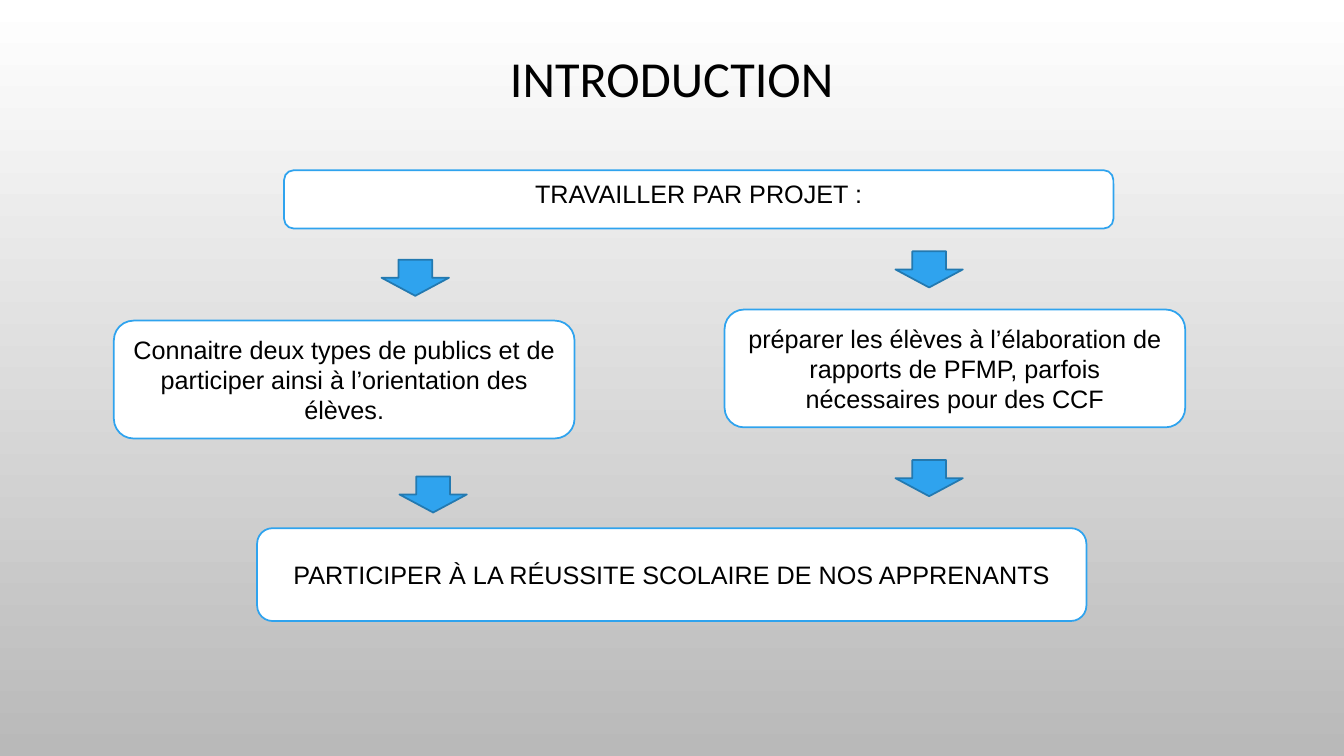
from typing import NamedTuple

from pptx import Presentation
from pptx.dml.color import RGBColor
from pptx.enum.shapes import MSO_SHAPE
from pptx.enum.text import MSO_ANCHOR, PP_ALIGN
from pptx.util import Cm, Pt

ROUND = MSO_SHAPE.ROUNDED_RECTANGLE
ARROW = MSO_SHAPE.RIGHT_ARROW
MIDDLE = MSO_ANCHOR.MIDDLE
CENTER = PP_ALIGN.CENTER

BLACK, WHITE, GREY = "000000", "FFFFFF", "B9B9B9"
BLUE, NAVY = "2FA3EE", "2379B0"
WIDE, HALF = 20.9, 11.61  # box widths in cm
LONG, THICK = 0.91, 1.7  # arrow size in cm


class Box(NamedTuple):
    left: float
    top: float
    width: float
    height: float
    text: str
    bottom: float = 0.13  # bottom inset in cm


class Arrow(NamedTuple):
    left: float
    top: float


BOXES = [
    Box(7.16, 4.29, WIDE, 1.47, "TRAVAILLER PAR PROJET :", 0.41),
    Box(2.87, 8.08, HALF, 2.97,
        "Connaitre deux types de publics et de participer ainsi à "
        "l’orientation des élèves."),
    Box(18.26, 7.8, HALF, 2.97,
        "préparer les élèves à l’élaboration de rapports de PFMP, "
        "parfois nécessaires pour des CCF"),
    Box(6.48, 13.31, WIDE, 2.34,
        "PARTICIPER À LA RÉUSSITE SCOLAIRE DE NOS APPRENANTS"),
]
ARROWS = [Arrow(10.01, 6.15), Arrow(22.96, 5.94),
          Arrow(22.96, 11.2), Arrow(10.46, 11.61)]


def color(code: str) -> RGBColor:
    return RGBColor.from_string(code)


def write(shape, text: str, font: str, size: float):
    """Put one centred paragraph in the shape and return it."""
    frame = shape.text_frame
    frame.word_wrap = True
    frame.vertical_anchor = MIDDLE
    para = frame.paragraphs[0]
    para.text = text
    para.alignment = CENTER
    para.font.name = font
    para.font.size = Pt(size)
    para.font.color.rgb = color(BLACK)
    return para


def paint(shape, fill: str, line: str) -> None:
    shape.shadow.inherit = False
    shape.fill.solid()
    shape.fill.fore_color.rgb = color(fill)
    shape.line.color.rgb = color(line)
    shape.line.width = Pt(1.25)


def draw_box(slide, box: Box) -> None:
    shape = slide.shapes.add_shape(
        ROUND, Cm(box.left), Cm(box.top), Cm(box.width), Cm(box.height))
    paint(shape, WHITE, BLUE)
    write(shape, box.text, "Arial", 18)
    shape.text_frame.margin_bottom = Cm(box.bottom)


def draw_arrow(slide, arrow: Arrow) -> None:
    shape = slide.shapes.add_shape(
        ARROW, Cm(arrow.left), Cm(arrow.top), Cm(LONG), Cm(THICK))
    shape.rotation = 90
    paint(shape, BLUE, NAVY)


def main() -> None:
    deck = Presentation()
    deck.slide_width, deck.slide_height = Cm(33.87), Cm(19.05)
    slide = deck.slides.add_slide(deck.slide_layouts[6])

    # Background, white at the top to grey at the bottom
    back = slide.background.fill
    back.gradient()
    back.gradient_angle = 270
    for stop, code in zip(back.gradient_stops, (WHITE, GREY)):
        stop.color.rgb = color(code)

    # Title
    title = slide.shapes.add_textbox(Cm(2.54), Cm(0.94), Cm(28.78), Cm(2.21))
    write(title, "INTRODUCTION", "Calibri", 36).line_spacing = 0.9

    # Flow of ideas
    for box in BOXES:
        draw_box(slide, box)
    for arrow in ARROWS:
        draw_arrow(slide, arrow)

    deck.save("out.pptx")


if __name__ == "__main__":
    main()
